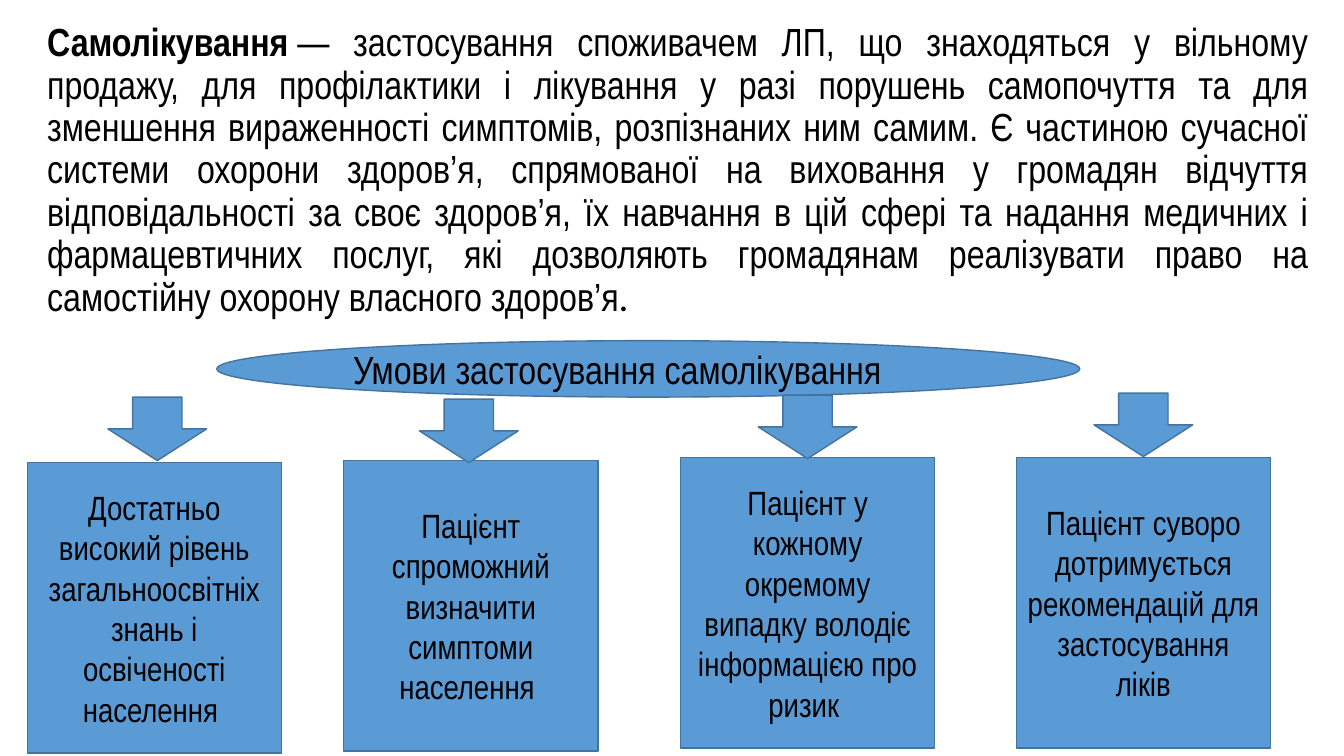
"""Builds a slide defining self-medication and its four conditions of use."""
from dataclasses import dataclass

from pptx import Presentation
from pptx.dml.color import RGBColor
from pptx.enum.shapes import MSO_SHAPE as SHAPE
from pptx.enum.text import MSO_ANCHOR as ANCHOR, PP_ALIGN as ALIGN
from pptx.util import Inches, Pt


@dataclass(frozen=True)
class Theme:
    fill: RGBColor = RGBColor(0x5B, 0x9B, 0xD5)
    line: RGBColor = RGBColor(0x43, 0x73, 0x9E)
    text: RGBColor = RGBColor(0, 0, 0)
    font: str = "Arial Narrow"
    stop_font: str = "Calibri"
    large: int = 28
    small: int = 24


THEME = Theme()
TERM = "Самолікування"
DEFINITION = (
    "\u00a0— застосування споживачем ЛП, що знаходяться у вільному продажу, "
    "для профілактики і лікування у разі порушень самопочуття та для зменшення "
    "вираженності симптомів, розпізнаних ним самим. Є частиною сучасної системи "
    "охорони здоров’я, спрямованої на виховання у громадян відчуття "
    "відповідальності за своє здоров’я, їх навчання в цій сфері та надання "
    "медичних і фармацевтичних послуг, які дозволяють громадянам реалізувати "
    "право на самостійну охорону власного здоров’я"
)
HEADING = "Умови застосування самолікування "

# text, box left, box top, arrow left, arrow top
CONDITIONS = [
    ("Достатньо високий рівень загальноосвітніх знань і освіченості населення ",
     0.27, 4.59, 1.07, 3.94),
    ("Пацієнт спроможний визначити симптоми населення ",
     3.41, 4.57, 4.16, 3.96),
    ("Пацієнт у кожному окремому випадку володіє інформацією про ризик ",
     6.75, 4.54, 7.52, 3.92),
    ("Пацієнт суворо дотримується рекомендацій для застосування ліків",
     10.08, 4.54, 10.85, 3.9),
]
BOX_SIZE = (2.52, 2.88)
ARROW_SIZE = (0.98, 0.63)


def add_run(p, text, size, font=THEME.font, bold=False):
    r = p.add_run()
    r.text = text
    r.font.name, r.font.size, r.font.bold = font, Pt(size), bold
    r.font.color.rgb = THEME.text


def add_filled(s, kind, left, top, size, text="", pt=THEME.small, align=ALIGN.CENTER):
    sp = s.shapes.add_shape(kind, *map(Inches, (left, top, *size)))
    sp.shadow.inherit = False
    sp.fill.solid()
    sp.fill.fore_color.rgb = THEME.fill
    sp.line.color.rgb = THEME.line
    sp.line.width = Pt(1)
    if text:
        tf = sp.text_frame
        tf.word_wrap = True
        tf.vertical_anchor = ANCHOR.MIDDLE
        p = tf.paragraphs[0]
        p.alignment = align
        add_run(p, text, pt)


def add_definition(s):
    tf = s.shapes.add_textbox(*map(Inches, (0.37, 0.18, 12.7, 5.33))).text_frame
    tf.word_wrap = True
    p = tf.paragraphs[0]
    p.alignment = ALIGN.JUSTIFY
    p.line_spacing = 0.9
    add_run(p, TERM, THEME.large, bold=True)
    add_run(p, DEFINITION, THEME.large)
    add_run(p, ".", THEME.large, THEME.stop_font)


def main():
    prs = Presentation()
    prs.slide_width, prs.slide_height = Inches(13.33), Inches(7.5)
    s = prs.slides.add_slide(prs.slide_layouts[6])
    add_definition(s)
    add_filled(s, SHAPE.OVAL, 2.15, 3.38, (8.56, 0.56),
               HEADING, THEME.large, ALIGN.JUSTIFY)
    for text, left, top, _, _ in CONDITIONS:
        add_filled(s, SHAPE.RECTANGLE, left, top, BOX_SIZE, text)
    for _, _, _, left, top in CONDITIONS:
        add_filled(s, SHAPE.DOWN_ARROW, left, top, ARROW_SIZE)
    prs.save("out.pptx")


if __name__ == "__main__":
    main()
